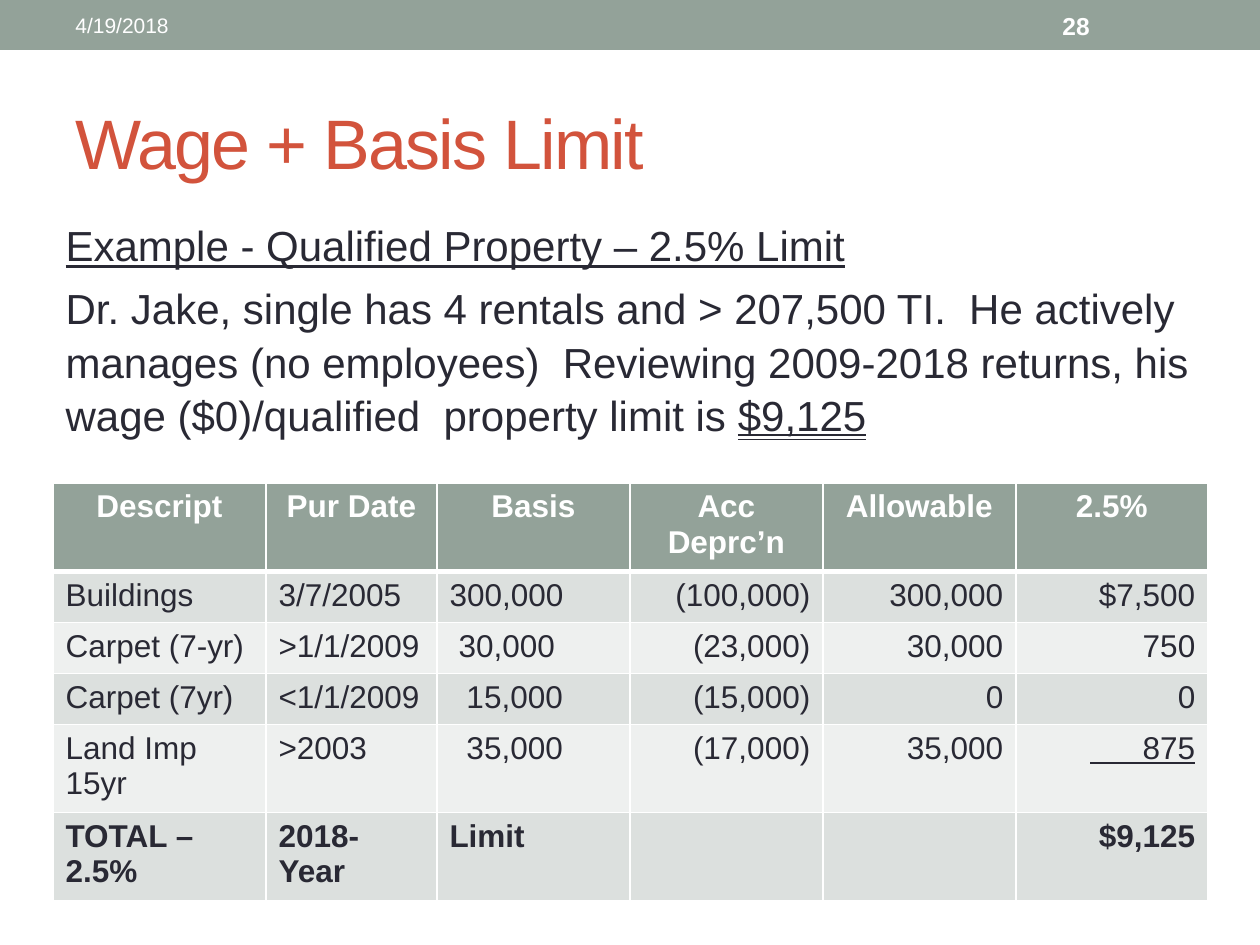
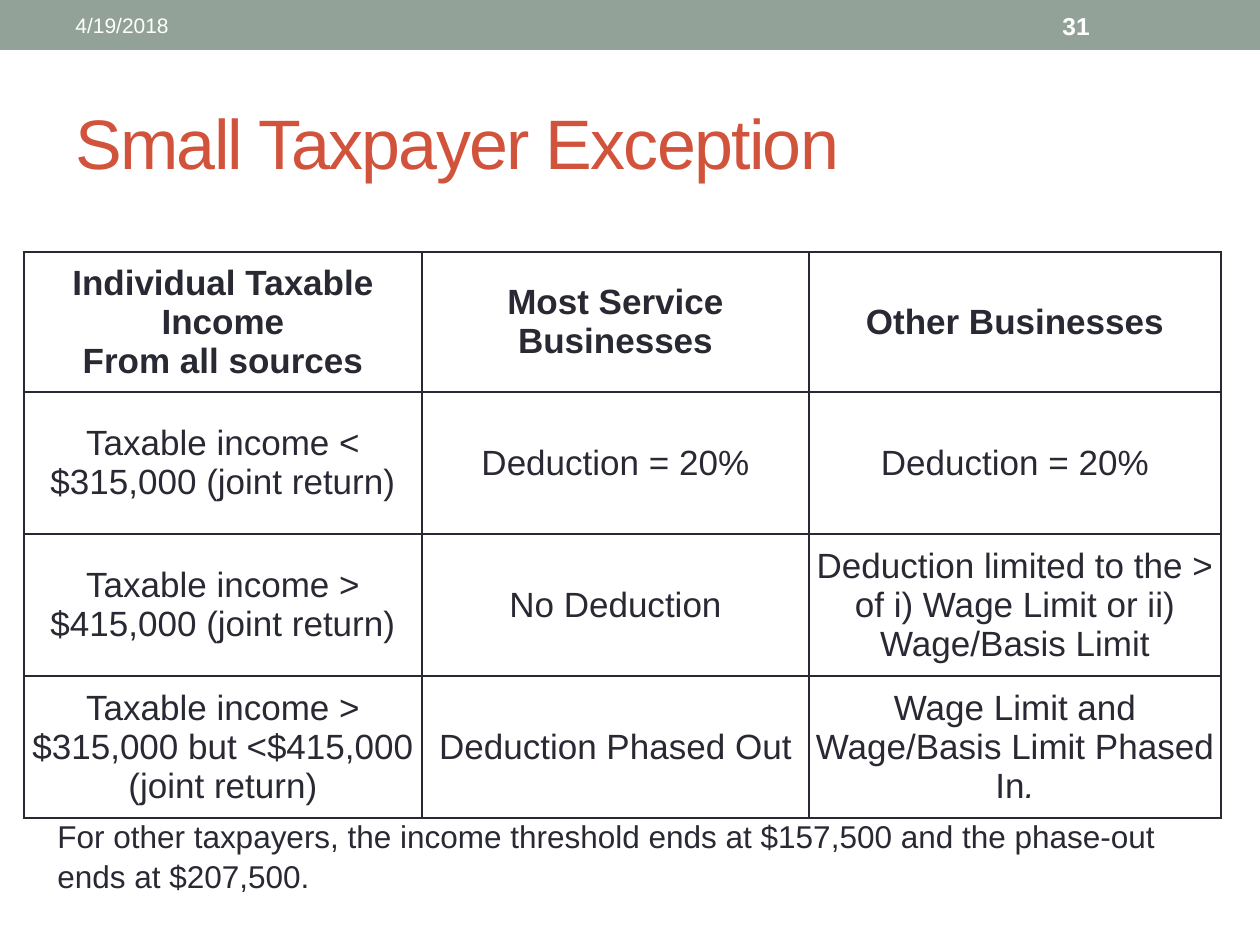
from dataclasses import dataclass

from lxml import etree
from pptx import Presentation
from pptx.dml.color import RGBColor
from pptx.enum import shapes, text
from pptx.oxml import ns
from pptx.util import Pt

# Content: a paragraph is a list of (words, style) spans
DATE = "4/19/2018"

LIMIT_TITLE, LIMIT_NUMBER = "Wage + Basis Limit", "28"
LIMIT_EXAMPLE = [
    [("Example - Qualified Property – 2.5% Limit", {"underline": True})],
    [("Dr. Jake, single has 4 rentals and > 207,500 TI.  He actively manages "
      "(no employees)  Reviewing 2009-2018 returns, his wage ($0)/qualified  "
      "property limit is ", {}),
     ("$9,125", {"underline": text.MSO_UNDERLINE.DOUBLE_LINE})],
]
PROPERTY_ROWS = [
    ["Descript", "Pur Date", "Basis", "Acc Deprc’n", "Allowable", "2.5%"],
    ["Buildings", "3/7/2005", "300,000", "(100,000)", "300,000", "$7,500"],
    ["Carpet (7-yr)", ">1/1/2009", "30,000", "(23,000)", "30,000", "750"],
    ["Carpet (7yr)", "<1/1/2009", "15,000", "(15,000)", "0", "0"],
    ["Land Imp 15yr", ">2003", "35,000", "(17,000)", "35,000", "      875"],
    ["TOTAL – 2.5%", "2018-Year", "Limit", "", "", "$9,125"],
]
BASIS_INDENTS = {2: 9, 3: 17, 4: 17}  # row: px

EXCEPTION_TITLE, EXCEPTION_NUMBER = "Small Taxpayer Exception", "31"
EXCEPTION_ROWS = [
    ["Individual Taxable Income\nFrom all sources", "Most Service Businesses",
     "Other Businesses"],
    ["Taxable income < $315,000 (joint return)", "Deduction = 20%", "Deduction = 20%"],
    ["Taxable income > $415,000 (joint return)", "No Deduction",
     "Deduction limited to the > of i) Wage Limit or ii) Wage/Basis Limit"],
    ["Taxable income > $315,000 but <$415,000 (joint return)", "Deduction Phased Out",
     "Wage Limit and Wage/Basis Limit Phased In."],
]
EXCEPTION_NOTE = ("For other taxpayers, the income threshold ends at $157,500 "
                  "and the phase-out ends at $207,500.")


@dataclass(frozen=True)
class Theme:
    font: str = "Arial"
    sage: str = "93A299"
    rust: str = "D2533C"
    ink: str = "292934"
    white: str = "FFFFFF"
    stripes: tuple = ("EEF0EF", "DCE0DE")
    title: int = 40
    body: int = 24
    grid: int = 20
    small: int = 18
    number: int = 14
    date: int = 12


THEME = Theme()
LEFT, CENTER, RIGHT = text.PP_ALIGN.LEFT, text.PP_ALIGN.CENTER, text.PP_ALIGN.RIGHT
MIDDLE, TOP = text.MSO_ANCHOR.MIDDLE, text.MSO_ANCHOR.TOP

# Layout in px
PX_PER_INCH = 126
PAGE = (1260, 945)
BAND = (0, 0, 1260, 50)
TITLE = (63, 73, 1134, 136)
DATE_BOX = (63, 3, 399, 45)
NUMBER_BOX = (1050, 3, 147, 45)
EXAMPLE = (53, 210, 1155, 551)
NOTE = (45, 809, 1176, 89)
PROPERTY_AT, PROPERTY_COLUMNS = (53, 483), [213, 171, 193, 193, 193, 192]
PROPERTY_HEIGHTS = [51] * len(PROPERTY_ROWS)
EXCEPTION_AT, EXCEPTION_COLUMNS = (24, 252), [398, 387, 412]
EXCEPTION_HEIGHTS = [140, 142, 142, 142]


def emu(px):
    return round(px * 914400 / PX_PER_INCH)


def place(box, frame):
    box.left, box.top, box.width, box.height = map(emu, frame)


def write(frame, paragraphs, size, color, align=LEFT, bold=False, before=0, spacing=None):
    for index, spans in enumerate(paragraphs):
        para = frame.add_paragraph() if index else frame.paragraphs[0]
        para.alignment = align
        para.space_before = Pt(before)
        if spacing:
            para.line_spacing = spacing
        for words, style in spans:
            span = para.add_run()
            span.text = words
            font = span.font
            font.name, font.size, font.bold = THEME.font, Pt(size), bold
            font.color.rgb = RGBColor.from_string(color)
            for name, value in style.items():
                setattr(font, name, value)


def add_text(page, frame, words, size, color, anchor=MIDDLE, **options):
    box = page.shapes.add_textbox(*map(emu, frame))
    box.text_frame.word_wrap = True
    box.text_frame.vertical_anchor = anchor
    write(box.text_frame, [[(words, {})]], size, color, **options)
    return box


def add_page(deck, layout, title, number):
    page = deck.slides.add_slide(deck.slide_layouts[layout])
    # Band with date and page number
    band = page.shapes.add_shape(shapes.MSO_SHAPE.RECTANGLE, *map(emu, BAND))
    band.shadow.inherit = False
    band.fill.solid()
    band.fill.fore_color.rgb = RGBColor.from_string(THEME.sage)
    band.line.fill.background()
    add_text(page, DATE_BOX, DATE, THEME.date, THEME.white)
    add_text(page, NUMBER_BOX, number, THEME.number, THEME.white, bold=True)
    # Title
    heading = page.shapes.title
    place(heading, TITLE)
    heading.text_frame.vertical_anchor = MIDDLE
    write(heading.text_frame, [[(title, {})]], THEME.title, THEME.rust)
    heading.text_frame.paragraphs[0].runs[0].font._element.set("spc", "-100")
    return page


def set_borders(cell, color, top=1, bottom=1):
    properties = cell._tc.get_or_add_tcPr()
    sides = (("lnL", 1), ("lnR", 1), ("lnT", top), ("lnB", bottom))
    for index, (side, points) in enumerate(sides):
        line = etree.Element(ns.qn(f"a:{side}"), w=str(Pt(points)))
        fill = etree.SubElement(line, ns.qn("a:solidFill"))
        etree.SubElement(fill, ns.qn("a:srgbClr"), val=color)
        properties.insert(index, line)


def add_grid(page, at, columns, heights):
    size = (sum(columns), sum(heights))
    table = page.shapes.add_table(len(heights), len(columns), *map(emu, at + size)).table
    table.first_row = table.horz_banding = False
    for column, width in zip(table.columns, columns):
        column.width = emu(width)
    for row, height in zip(table.rows, heights):
        row.height = emu(height)
    return table


def add_property_table(page):
    table = add_grid(page, PROPERTY_AT, PROPERTY_COLUMNS, PROPERTY_HEIGHTS)
    last = len(PROPERTY_ROWS) - 1
    for r, row in enumerate(PROPERTY_ROWS):
        for c, words in enumerate(row):
            cell = table.cell(r, c)
            header = r == 0
            cell.fill.solid()
            cell.fill.fore_color.rgb = RGBColor.from_string(
                THEME.sage if header else THEME.stripes[r % 2])
            set_borders(cell, THEME.white, top=3 if r == 1 else 1, bottom=3 if header else 1)
            if c == 2 and r in BASIS_INDENTS:
                cell.margin_left = emu(12.6 + BASIS_INDENTS[r])
            if words:
                summed = r == last - 1 and c == len(row) - 1
                write(cell.text_frame, [[(words, {"underline": True} if summed else {})]],
                      THEME.small, THEME.white if header else THEME.ink,
                      align=CENTER if header else RIGHT if c > 2 else LEFT,
                      bold=r in (0, last))


def add_exception_table(page):
    table = add_grid(page, EXCEPTION_AT, EXCEPTION_COLUMNS, EXCEPTION_HEIGHTS)
    for r, row in enumerate(EXCEPTION_ROWS):
        for c, words in enumerate(row):
            cell = table.cell(r, c)
            cell.fill.background()
            set_borders(cell, THEME.ink)
            cell.vertical_anchor = MIDDLE
            cell.margin_left = cell.margin_right = cell.margin_top = cell.margin_bottom = 0
            paragraphs = [[(line, {})] for line in words.split("\n")]
            if words.endswith("."):
                paragraphs = [[(words[:-1], {}), (".", {"italic": True})]]
            write(cell.text_frame, paragraphs, THEME.grid, THEME.ink,
                  align=CENTER, bold=r == 0)


def build_limit_page(deck):
    page = add_page(deck, 1, LIMIT_TITLE, LIMIT_NUMBER)
    example = page.placeholders[1]
    place(example, EXAMPLE)
    example.text_frame.auto_size = text.MSO_AUTO_SIZE.NONE
    write(example.text_frame, LIMIT_EXAMPLE, THEME.body, THEME.ink,
          before=4.8, spacing=1.07)
    for para in example.text_frame.paragraphs:
        properties = para._p.get_or_add_pPr()
        properties.set("marL", "0")
        properties.set("indent", "0")
        etree.SubElement(properties, ns.qn("a:buNone"))
    add_property_table(page)


def build_exception_page(deck):
    page = add_page(deck, 5, EXCEPTION_TITLE, EXCEPTION_NUMBER)
    add_exception_table(page)
    note = add_text(page, NOTE, EXCEPTION_NOTE, THEME.small, THEME.ink,
                    anchor=TOP, spacing=1.05)
    note.text_frame.auto_size = text.MSO_AUTO_SIZE.SHAPE_TO_FIT_TEXT


def main():
    deck = Presentation()
    deck.slide_width, deck.slide_height = map(emu, PAGE)
    build_limit_page(deck)
    build_exception_page(deck)
    deck.save("out.pptx")


if __name__ == "__main__":
    main()
